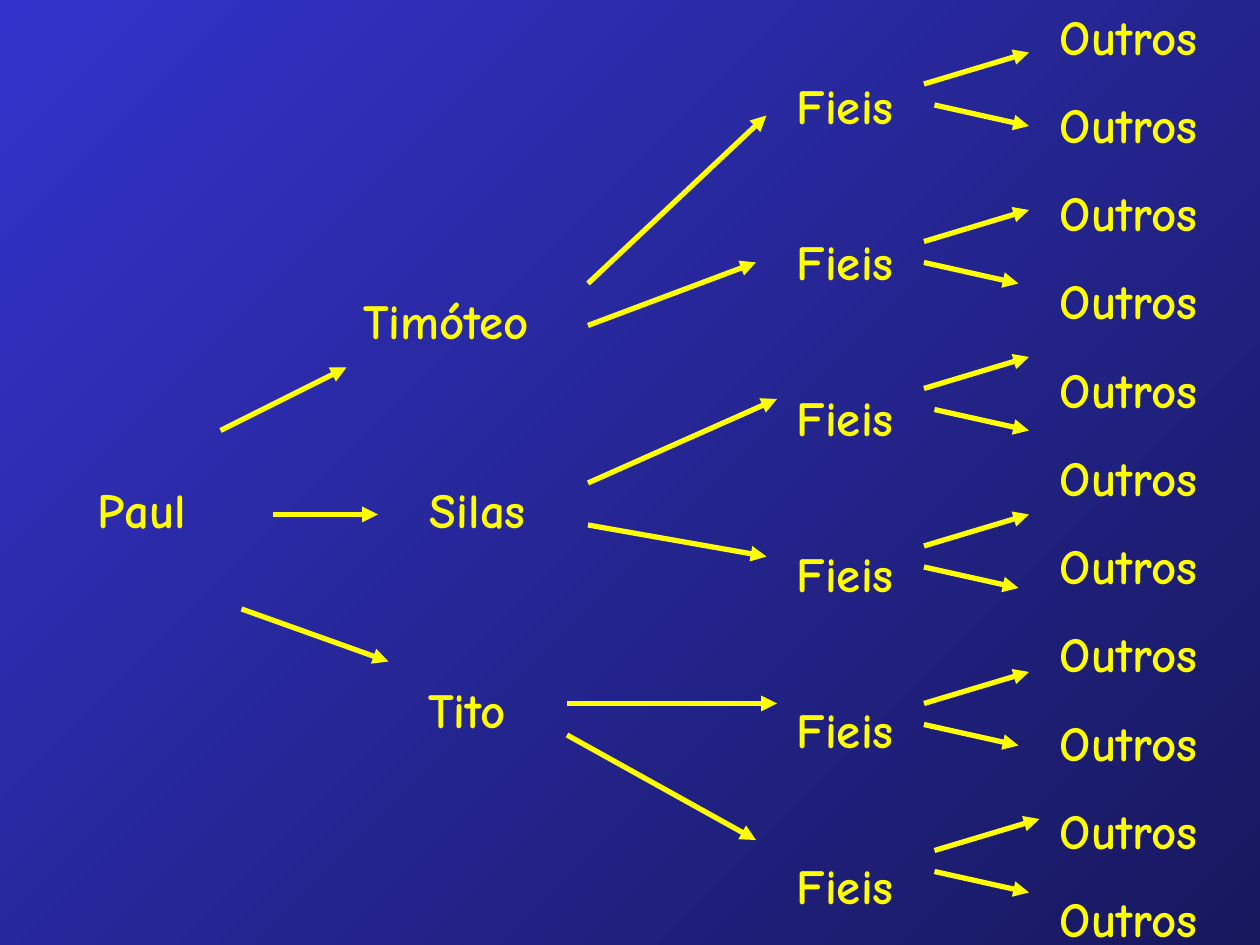
from dataclasses import dataclass

from lxml import etree
from pptx import Presentation
from pptx.dml.color import RGBColor
from pptx.enum.shapes import MSO_CONNECTOR
from pptx.enum.text import MSO_ANCHOR, MSO_AUTO_SIZE, PP_ALIGN
from pptx.oxml.ns import qn
from pptx.util import Inches, Pt

STRAIGHT = MSO_CONNECTOR.STRAIGHT
MIDDLE = MSO_ANCHOR.MIDDLE
CENTER = PP_ALIGN.CENTER
NO_AUTOFIT = MSO_AUTO_SIZE.NONE
TITLE_ONLY = 5


@dataclass(frozen=True)
class Theme:
    font: str = "Comic Neue"
    size: int = 28
    arrow_width: int = 3
    ink: RGBColor = RGBColor(0xFF, 0xFF, 0x00)
    light: RGBColor = RGBColor(0x33, 0x33, 0xCC)
    dark: RGBColor = RGBColor(0x18, 0x18, 0x5E)


THEME = Theme()

# The page is a grid of 120 columns by 90 rows.
COLUMNS, ROWS = 120, 90
PAGE_WIDTH, PAGE_HEIGHT = Inches(10), Inches(7.5)
LABEL_WIDTH, LABEL_HEIGHT = 37, 15

# Name, column and row of the label, then its arrows as (start, end).
ROOT = ("Paul", -5, 41, [((21, 41), (33, 35)),
                         ((26, 49), (36, 49)),
                         ((23, 58), (37, 63))])
DISCIPLES = [
    ("Timóteo", 24, 23, [((56, 27), (73, 11)), ((56, 31), (72, 25))]),
    ("Silas", 27, 41, [((56, 46), (74, 38)), ((56, 50), (73, 53))]),
    ("Tito", 26, 60, [((54, 67), (74, 67)), ((54, 70), (72, 80))]),
]
# Row of each fork, then the columns where its upper and lower arrows start.
FORKS = [(8, 88, 89), (23, 88, 88), (37, 88, 89),
         (52, 88, 88), (67, 88, 88), (81, 89, 89)]


def across(columns):
    return round(PAGE_WIDTH * columns / COLUMNS)


def down(rows):
    return round(PAGE_HEIGHT * rows / ROWS)


def paint_background(page):
    fill = page.background.fill
    fill.gradient()
    fill.gradient_angle = 315
    for stop, color in zip(fill.gradient_stops, (THEME.light, THEME.dark)):
        stop.color.rgb = color


def place_label(box, words, column, row, spacing=1.0):
    """Centre one paragraph per word in a label at the given grid cell."""
    box.left, box.top = across(column), down(row)
    box.width, box.height = across(LABEL_WIDTH), down(LABEL_HEIGHT)
    frame = box.text_frame
    frame.word_wrap = True
    frame.auto_size = NO_AUTOFIT
    frame.vertical_anchor = MIDDLE
    for index, word in enumerate(words):
        para = frame.add_paragraph() if index else frame.paragraphs[0]
        para.alignment = CENTER
        para.line_spacing = spacing
        span = para.add_run()
        span.text = word
        span.font.name = THEME.font
        span.font.size = Pt(THEME.size)
        span.font.bold = True
        span.font.color.rgb = THEME.ink


def add_label(page, words, column, row, spacing=1.0):
    box = page.shapes.add_textbox(0, 0, 0, 0)
    place_label(box, words, column, row, spacing)


def add_arrow(page, start, end):
    arrow = page.shapes.add_connector(
        STRAIGHT, across(start[0]), down(start[1]), across(end[0]), down(end[1]))
    arrow.line.color.rgb = THEME.ink
    arrow.line.width = Pt(THEME.arrow_width)
    etree.SubElement(arrow.line._get_or_add_ln(), qn("a:tailEnd"), type="triangle")
    etree.SubElement(arrow._element.spPr, qn("a:effectLst"))


def add_root(page):
    name, column, row, arrows = ROOT
    place_label(page.shapes.title, [name], column, row)
    for start, end in arrows:
        add_arrow(page, start, end)


def add_disciples(page):
    for name, column, row, arrows in DISCIPLES:
        add_label(page, [name], column, row)
        for start, end in arrows:
            add_arrow(page, start, end)


def add_followers(page):
    add_label(page, ["Fieis"] * len(FORKS), 62, 35, spacing=2.65)
    add_label(page, ["Outros"] * 11, 89, 36.5, spacing=1.5)
    for row, upper, lower in FORKS:
        add_arrow(page, (upper, row), (upper + 10, row - 3))
        add_arrow(page, (lower, row + 2), (lower + 9, row + 4))


def main():
    deck = Presentation()
    deck.slide_width, deck.slide_height = PAGE_WIDTH, PAGE_HEIGHT
    page = deck.slides.add_slide(deck.slide_layouts[TITLE_ONLY])
    paint_background(page)
    add_root(page)
    add_disciples(page)
    add_followers(page)
    deck.save("out.pptx")


if __name__ == "__main__":
    main()
